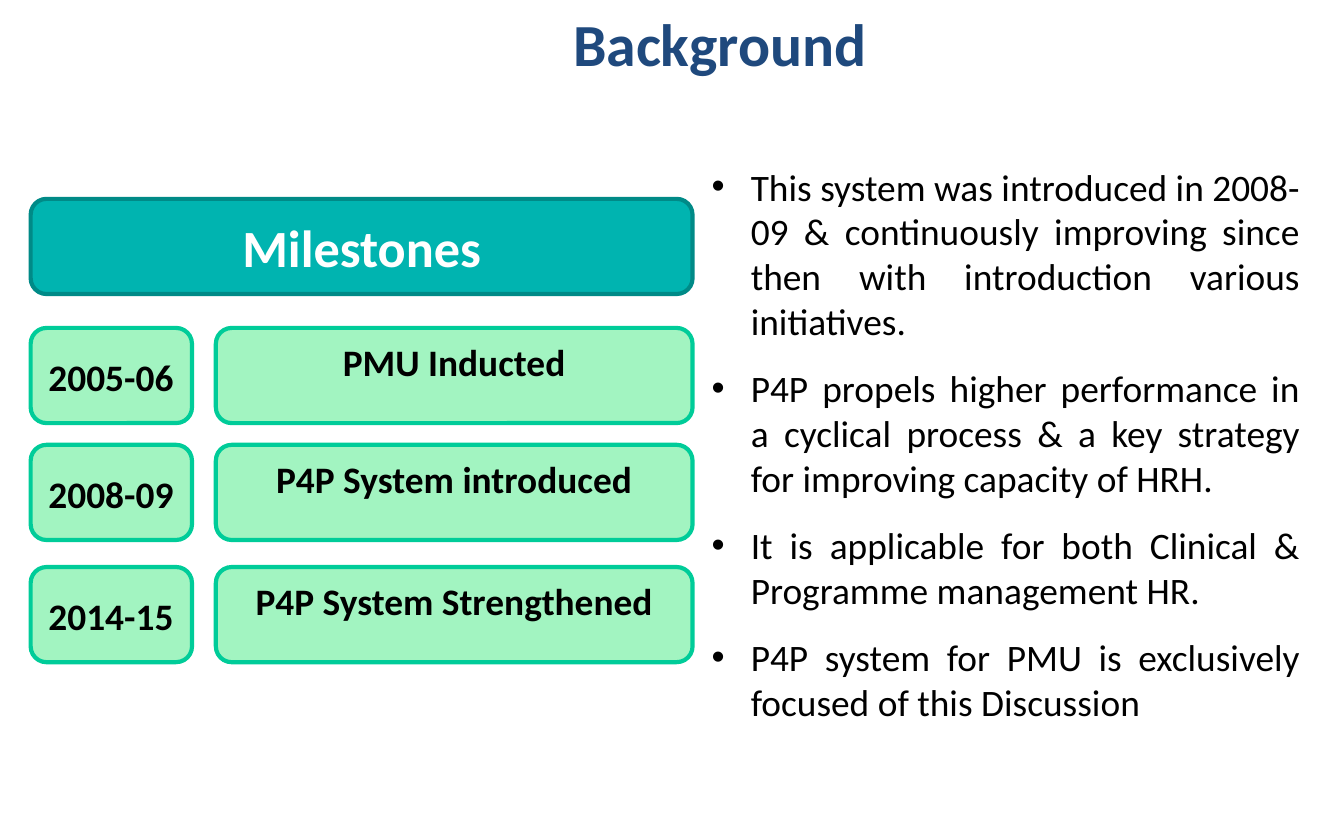
from pptx import Presentation
from pptx.dml.color import RGBColor
from pptx.enum.shapes import MSO_SHAPE
from pptx.enum.text import MSO_ANCHOR, MSO_AUTO_SIZE, PP_ALIGN
from pptx.oxml.ns import qn
from pptx.util import Cm, Pt
from lxml import etree

ROUND = MSO_SHAPE.ROUNDED_RECTANGLE
TOP, MIDDLE = MSO_ANCHOR.TOP, MSO_ANCHOR.MIDDLE
LEFT, CENTER, JUSTIFY = PP_ALIGN.LEFT, PP_ALIGN.CENTER, PP_ALIGN.JUSTIFY
FONT = "Calibri"
TEAL = ("00B4B0", "008A87")
MINT = ("A2F4C1", "00CC99")
STEPS = [
    (0, "2005-06", "PMU Inducted"),
    (2.21, "2008-09", "P4P System introduced"),
    (4.52, "2014-15", "P4P System Strengthened"),
]
POINTS = [
    "This system was introduced in 2008-09 & continuously improving since "
    "then with introduction various initiatives.",
    "P4P propels higher performance in a cyclical process & a key strategy "
    "for improving capacity of HRH.",
    "It is applicable for both Clinical & Programme management HR.",
    "P4P system for PMU is exclusively focused of this Discussion",
]


def paint(color, value):
    color.rgb = RGBColor.from_string(value)


def style(para, size, color, bold, align):
    para.alignment = align
    for run in para.runs:
        run.font.name = FONT
        run.font.size = Pt(size)
        run.font.bold = bold
        paint(run.font.color, color)


def place(shape, box):
    shape.left, shape.top, shape.width, shape.height = map(Cm, box)


def add_title(slide, box, text):
    title = slide.shapes.title
    place(title, box)
    frame = title.text_frame
    frame.text = text
    frame.auto_size = MSO_AUTO_SIZE.NONE
    frame.vertical_anchor = TOP
    style(frame.paragraphs[0], 32, "1F497D", True, CENTER)


def add_card(slide, box, text, look, size=20, color="000000",
             align=CENTER, anchor=TOP, inset=0.13, after=10):
    card = slide.shapes.add_shape(ROUND, *map(Cm, box))
    card.shadow.inherit = False
    fill, edge = look
    card.fill.solid()
    paint(card.fill.fore_color, fill)
    paint(card.line.color, edge)
    card.line.width = Pt(2.25)
    frame = card.text_frame
    frame.text = text
    frame.word_wrap = True
    frame.vertical_anchor = anchor
    frame.margin_top = Cm(inset)
    para = frame.paragraphs[0]
    para.space_after = Pt(after)
    style(para, size, color, True, align)


def add_steps(slide, box):
    left, top, width, high = box
    year, gap, head = 3.05, 0.45, 2.44
    add_card(slide, (left, top, width, high), "Milestones", TEAL,
             28, "FFFFFF", anchor=MIDDLE)
    for drop, date, event in STEPS:
        row = top + head + drop
        add_card(slide, (left, row, year, high), date, MINT,
                 align=LEFT, inset=0.41, after=0)
        add_card(slide, (left + year + gap, row, width - year - gap, high),
                 event, MINT)


def add_points(slide, box):
    frame = slide.shapes.add_textbox(*map(Cm, box)).text_frame
    frame.word_wrap = True
    frame.text = "\n".join(POINTS)
    for para in frame.paragraphs:
        props = para._p.get_or_add_pPr()
        props.set("marL", str(Cm(1.24)))
        props.set("indent", str(Cm(-0.74)))
        font = etree.SubElement(props, qn("a:buFont"))
        font.set("typeface", "Arial")
        mark = etree.SubElement(props, qn("a:buChar"))
        mark.set("char", "•")
        para.space_after = Pt(12)
        style(para, 20, "000000", False, JUSTIFY)


def main():
    deck = Presentation()
    deck.slide_width, deck.slide_height = Cm(25.4), Cm(15.88)
    slide = deck.slides.add_slide(deck.slide_layouts[5])
    add_title(slide, (5.28, 0, 16.66, 1.63), "Background")
    add_steps(slide, (0.58, 3.76, 12.51, 1.8))
    add_points(slide, (12.7, 2.97, 12.12, 10.95))
    deck.save("out.pptx")


if __name__ == "__main__":
    main()
